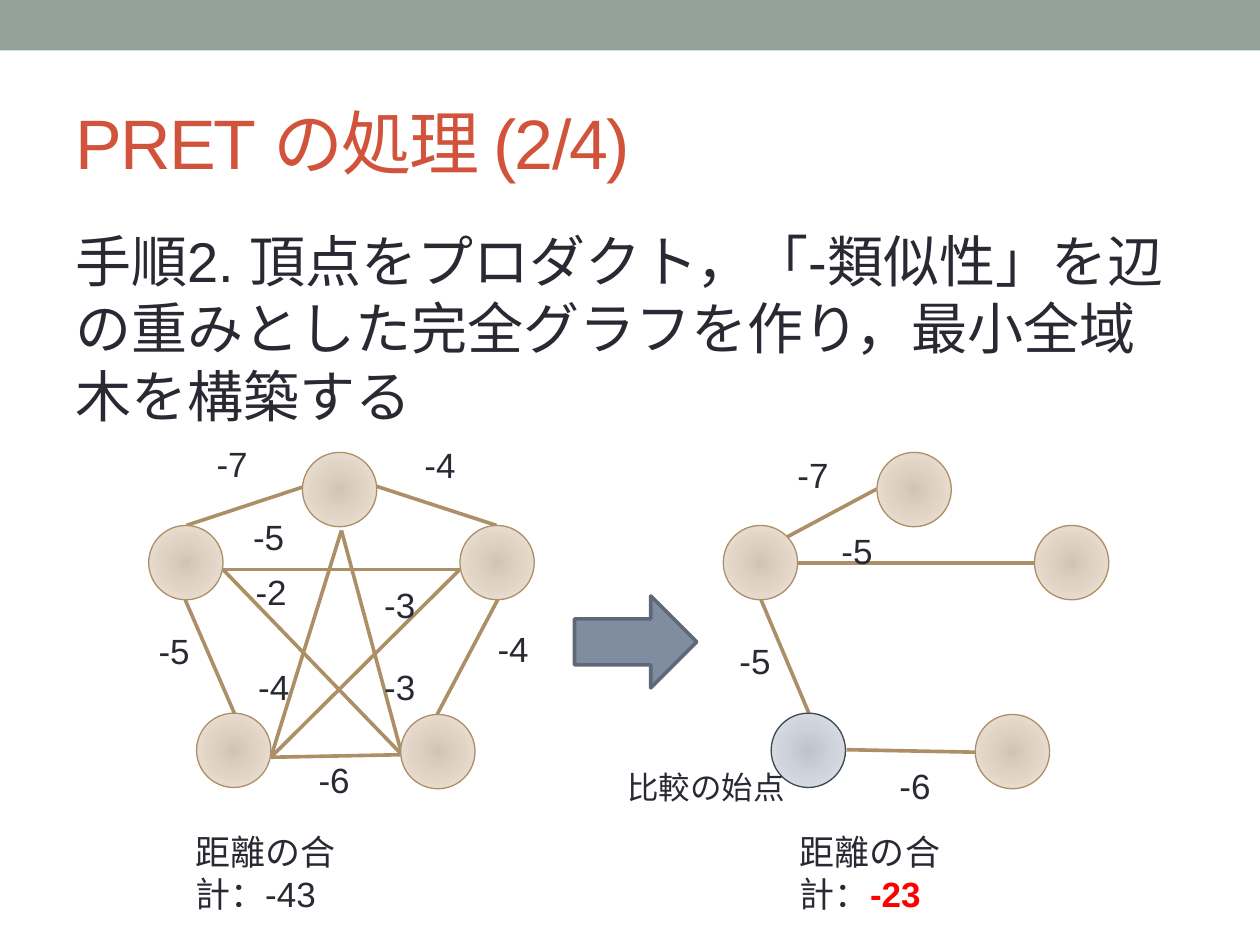
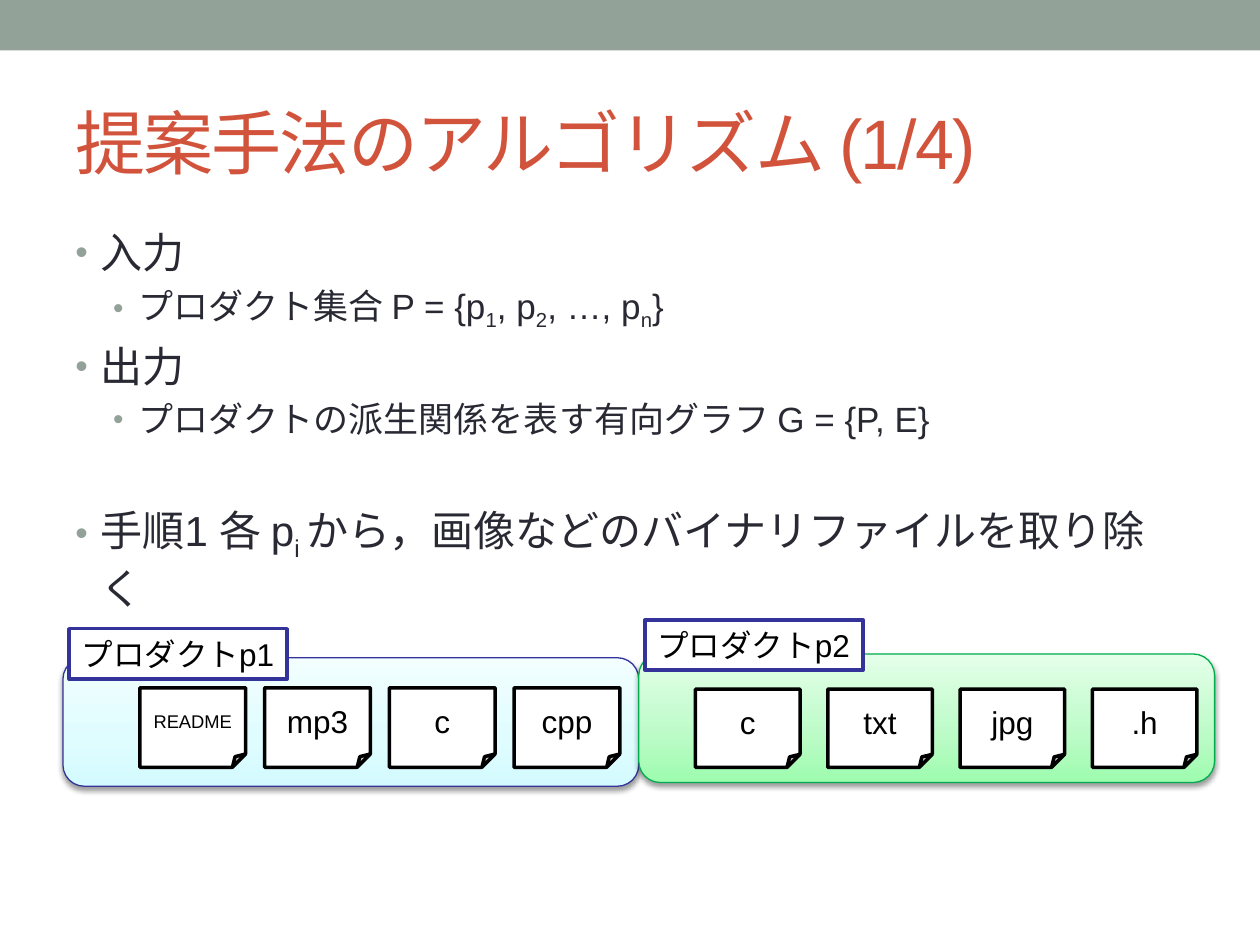
from dataclasses import dataclass
from typing import NamedTuple

from pptx import Presentation
from pptx.dml.color import RGBColor
from pptx.enum.shapes import MSO_CONNECTOR, MSO_SHAPE
from pptx.enum.text import MSO_ANCHOR, PP_ALIGN
from pptx.oxml import parse_xml
from pptx.oxml.ns import nsdecls, qn
from pptx.util import Inches, Pt

FONT = "Arial"
SAGE = RGBColor(0x93, 0xA2, 0x99)
BRICK = RGBColor(0xD2, 0x53, 0x3C)
INK = RGBColor(0x29, 0x29, 0x34)
BLACK = RGBColor(0, 0, 0)
WHITE = RGBColor(255, 255, 255)
RED = RGBColor(255, 0, 0)
TAN = RGBColor(0xAD, 0x8F, 0x67)
SLATE = RGBColor(0x80, 0x8D, 0xA0)
SLATE_EDGE = RGBColor(0x5F, 0x68, 0x76)
START_EDGE = RGBColor(0x3E, 0x46, 0x52)
NAVY = RGBColor(0x33, 0x33, 0x99)
GREEN = RGBColor(0x00, 0xAC, 0x4E)

RADIAL = '<a:path path="circle"><a:fillToRect l="100000" t="100000" r="100000" b="100000"/></a:path>'
UPWARD = '<a:lin ang="16200000" scaled="1"/>'
NODE_SIZE = 0.59
RIGHT_SHIFT = 4.56
START_NODE = 3


class Run(NamedTuple):
    text: str
    size: float
    color: RGBColor = INK
    bold: bool = False
    subscript: bool = False


class Stop(NamedTuple):
    pos: int
    color: RGBColor


class Node(NamedTuple):
    x: float
    y: float


class Edge(NamedTuple):
    x1: float
    y1: float
    x2: float
    y2: float
    weight: str
    label_x: float
    label_y: float


@dataclass
class Item:
    runs: list[Run]
    level: int = 0
    before: float = 5


@dataclass
class Product:
    name: str
    box: tuple[float, float]
    label: tuple[float, float]
    edge: RGBColor
    stops: list[Stop]
    files: list[str]
    file_start: tuple[float, float]
    file_size: tuple[float, float]
    file_step: float


NODE_STOPS = [Stop(0, RGBColor(0xD1, 0xC4, 0xB6)), Stop(45, RGBColor(0xE1, 0xD3, 0xC4)),
              Stop(100, RGBColor(0xEF, 0xE7, 0xDF))]
START_STOPS = [Stop(0, RGBColor(0xBE, 0xC3, 0xCB)), Stop(45, RGBColor(0xCD, 0xD2, 0xDB)),
               Stop(100, RGBColor(0xE3, 0xE6, 0xEB))]
NODES = [Node(2.4, 3.59), Node(3.65, 4.17), Node(1.18, 4.17), Node(1.56, 5.66), Node(3.18, 5.67)]
COMPLETE_GRAPH = [
    Edge(3.95, 4.76, 3.47, 5.67, "-4", 3.85, 4.93),
    Edge(2.15, 6.01, 3.19, 5.99, "-6", 2.43, 5.97),
    Edge(1.47, 4.76, 1.86, 5.66, "-5", 1.16, 4.95),
    Edge(2.42, 3.86, 1.48, 4.17, "-7", 1.62, 3.46),
    Edge(2.71, 4.21, 3.19, 5.99, "-3", 2.95, 5.23),
    Edge(2.99, 3.86, 3.94, 4.17, "-4", 3.27, 3.47),
    Edge(2.71, 4.21, 2.15, 6.01, "-4", 1.95, 5.23),
    Edge(3.19, 5.99, 1.77, 4.52, "-2", 1.93, 4.48),
    Edge(3.65, 4.52, 1.77, 4.52, "-5", 1.91, 4.04),
    Edge(3.65, 4.52, 2.15, 6.01, "-3", 2.95, 4.58),
]
SPANNING_TREE = [
    Edge(6.72, 5.95, 7.74, 5.97, "-6", 7.04, 6.02),
    Edge(6.04, 4.76, 6.42, 5.66, "-5", 5.77, 5.03),
    Edge(6.96, 3.88, 6.25, 4.26, "-7", 6.23, 3.55),
    Edge(8.22, 4.47, 6.33, 4.47, "-5", 6.58, 4.15),
]
ALGORITHM = [
    Item([Run("入力", 24)]),
    Item([Run("プロダクト集合 P = {p", 20), Run("1", 20, subscript=True), Run(", p", 20),
          Run("2", 20, subscript=True), Run(", …, p", 20), Run("n", 20, subscript=True),
          Run("}", 20)], level=1, before=4),
    Item([Run("出力", 24)]),
    Item([Run("プロダクトの派生関係を表す有向グラフ G = {P, E}", 20)], level=1, before=4),
    Item([Run("手順1 各 p", 24), Run("i ", 24, subscript=True),
          Run("から，画像などのバイナリファイルを取り除く", 24)], before=37),
]
PRODUCTS = [
    Product("プロダクトp1", (0.5, 5.22), (0.55, 4.99), NAVY,
            [Stop(0, RGBColor(0xD3, 0xFB, 0xFF)), Stop(35, RGBColor(0xDF, 0xFC, 0xFF)),
             Stop(100, RGBColor(0xF2, 0xFE, 0xFF))],
            ["README", "mp3", "c", "cpp"], (1.11, 5.46), (0.84, 0.63), 0.99),
    Product("プロダクトp2", (5.07, 5.19), (5.12, 4.92), GREEN,
            [Stop(0, RGBColor(0x9D, 0xFC, 0xAE)), Stop(35, RGBColor(0xBB, 0xFB, 0xC6)),
             Stop(100, RGBColor(0xE4, 0xFF, 0xE9))],
            ["c", "txt", "jpg", ".h"], (5.52, 5.47), (0.83, 0.62), 1.05),
]


def add_runs(p, runs: list[Run]) -> None:
    for run in runs:
        r = p.add_run()
        r.text = run.text
        r.font.name = FONT
        r.font.size = Pt(run.size)
        r.font.color.rgb = run.color
        if run.bold:
            r.font.bold = True
        if run.subscript:
            r.font._element.set("baseline", "-25000")


def add_text(s, x: float, y: float, w: float, h: float, runs: list[Run], wrap: bool = True):
    tf = s.shapes.add_textbox(Inches(x), Inches(y), Inches(w), Inches(h)).text_frame
    tf.word_wrap = wrap
    add_runs(tf.paragraphs[0], runs)
    return tf


def add_preset(s, kind: MSO_SHAPE, x: float, y: float, w: float, h: float,
               fill: RGBColor | None, edge: RGBColor | None = None, width: float = 0.75):
    sp = s.shapes.add_shape(kind, Inches(x), Inches(y), Inches(w), Inches(h))
    sp.shadow.inherit = False
    if fill is not None:
        sp.fill.solid()
        sp.fill.fore_color.rgb = fill
    if edge is None:
        sp.line.fill.background()
    else:
        sp.line.color.rgb = edge
        sp.line.width = Pt(width)
    return sp


def set_gradient(sp, stops: list[Stop], direction: str) -> None:
    sp.fill.gradient()
    grad = sp._element.spPr.find(qn("a:gradFill"))
    marks = "".join(f'<a:gs pos="{st.pos * 1000}"><a:srgbClr val="{st.color}"/></a:gs>' for st in stops)
    source = parse_xml(f'<a:gradFill {nsdecls("a")}><a:gsLst>{marks}</a:gsLst>{direction}</a:gradFill>')
    for child in list(grad):
        grad.remove(child)
    for child in list(source):
        grad.append(child)


def set_shadow(sp) -> None:
    sp._element.spPr.find(qn("a:effectLst")).append(parse_xml(
        f'<a:outerShdw {nsdecls("a")} blurRad="{Pt(3.1)}" dist="{Pt(1.6)}" dir="5400000" rotWithShape="0">'
        '<a:srgbClr val="000000"><a:alpha val="38000"/></a:srgbClr></a:outerShdw>'))


def set_bullet(p, level: int) -> None:
    pPr = p._p.get_or_add_pPr()
    pPr.set("marL", str(Inches((0.2, 0.5)[level])))
    pPr.set("indent", str(Inches(-0.2)))
    for tag in (f'<a:buClr {nsdecls("a")}><a:srgbClr val="{SAGE}"/></a:buClr>',
                f'<a:buSzPct {nsdecls("a")} val="85000"/>',
                f'<a:buFont {nsdecls("a")} typeface="{FONT}"/>',
                f'<a:buChar {nsdecls("a")} char="•"/>'):
        pPr.append(parse_xml(tag))


def add_base(prs, title: str):
    s = prs.slides.add_slide(prs.slide_layouts[6])
    add_preset(s, MSO_SHAPE.RECTANGLE, 0, 0, 10, 0.4, SAGE)
    tf = add_text(s, 0.5, 0.58, 9, 1.08, [Run(title, 40, BRICK)])
    tf.vertical_anchor = MSO_ANCHOR.MIDDLE
    tf.paragraphs[0].runs[0].font._element.set("spc", "-100")
    return s


def add_edges(s, edges: list[Edge]) -> None:
    for e in edges:
        line = s.shapes.add_connector(MSO_CONNECTOR.STRAIGHT, Inches(e.x1), Inches(e.y1),
                                      Inches(e.x2), Inches(e.y2))
        line.line.color.rgb = TAN
        line.line.width = Pt(2.08)
        line._element.spPr.append(parse_xml(f'<a:effectLst {nsdecls("a")}/>'))
    for e in edges:
        add_text(s, e.label_x, e.label_y, 0.45, 0.44, [Run(e.weight, 20)], wrap=False)


def add_nodes(s, shift: float, start: int | None = None) -> None:
    for i, node in enumerate(NODES):
        first = i == start
        sp = add_preset(s, MSO_SHAPE.OVAL, node.x + shift, node.y, NODE_SIZE, NODE_SIZE,
                        None, START_EDGE if first else TAN)
        set_gradient(sp, START_STOPS if first else NODE_STOPS, RADIAL)


def add_product(s, product: Product) -> None:
    box = add_preset(s, MSO_SHAPE.ROUNDED_RECTANGLE, *product.box, 4.57, 1.02, None, product.edge)
    set_gradient(box, product.stops, UPWARD)
    set_shadow(box)
    x, y = product.file_start
    for i, name in enumerate(product.files):
        sp = add_preset(s, MSO_SHAPE.FOLDED_CORNER, x + i * product.file_step, y,
                        *product.file_size, WHITE, BLACK, 2)
        tf = sp.text_frame
        tf.vertical_anchor = MSO_ANCHOR.MIDDLE
        tf.paragraphs[0].alignment = PP_ALIGN.CENTER
        add_runs(tf.paragraphs[0], [Run(name, 10.5 if name == "README" else 18, BLACK)])
    label = add_preset(s, MSO_SHAPE.RECTANGLE, *product.label, 1.73, 0.4, WHITE, NAVY, 2)
    tf = label.text_frame
    tf.word_wrap = True
    tf.vertical_anchor = MSO_ANCHOR.TOP
    tf.paragraphs[0].alignment = PP_ALIGN.LEFT
    add_runs(tf.paragraphs[0], [Run(product.name, 18, BLACK)])


def build_spanning_tree(prs) -> None:
    s = add_base(prs, "PRET の処理 (2/4)")
    step = "手順2. 頂点をプロダクト，「-類似性」を辺の重みとした完全グラフを作り，最小全域木を構築する"
    tf = add_text(s, 0.5, 1.75, 9, 5.33, [Run(step, 32)])
    tf.paragraphs[0].space_before = Pt(6.4)
    add_edges(s, COMPLETE_GRAPH)
    add_edges(s, SPANNING_TREE)
    add_preset(s, MSO_SHAPE.RIGHT_ARROW, 4.56, 4.73, 0.97, 0.73, SLATE, SLATE_EDGE, 2.08)
    add_text(s, 6.25, 6.54, 2.15, 0.44, [Run("距離の合計：", 20), Run("-23", 20, RED, bold=True)])
    add_text(s, 1.45, 6.54, 2.15, 0.44, [Run("距離の合計：-43", 20)])
    add_nodes(s, 0)
    add_nodes(s, RIGHT_SHIFT, START_NODE)
    add_text(s, 4.88, 6.05, 1.46, 0.4, [Run("比較の始点", 18)], wrap=False)


def build_algorithm(prs) -> None:
    s = add_base(prs, "提案手法のアルゴリズム (1/4)")
    tf = add_text(s, 0.5, 1.75, 9, 5.33, [])
    for i, item in enumerate(ALGORITHM):
        p = tf.add_paragraph() if i else tf.paragraphs[0]
        p.level = item.level
        p.space_before = Pt(item.before)
        set_bullet(p, item.level)
        add_runs(p, item.runs)
    for product in PRODUCTS:
        add_product(s, product)


def main() -> None:
    prs = Presentation()
    prs.slide_width, prs.slide_height = Inches(10), Inches(7.5)
    build_spanning_tree(prs)
    build_algorithm(prs)
    prs.save("out.pptx")


if __name__ == "__main__":
    main()
